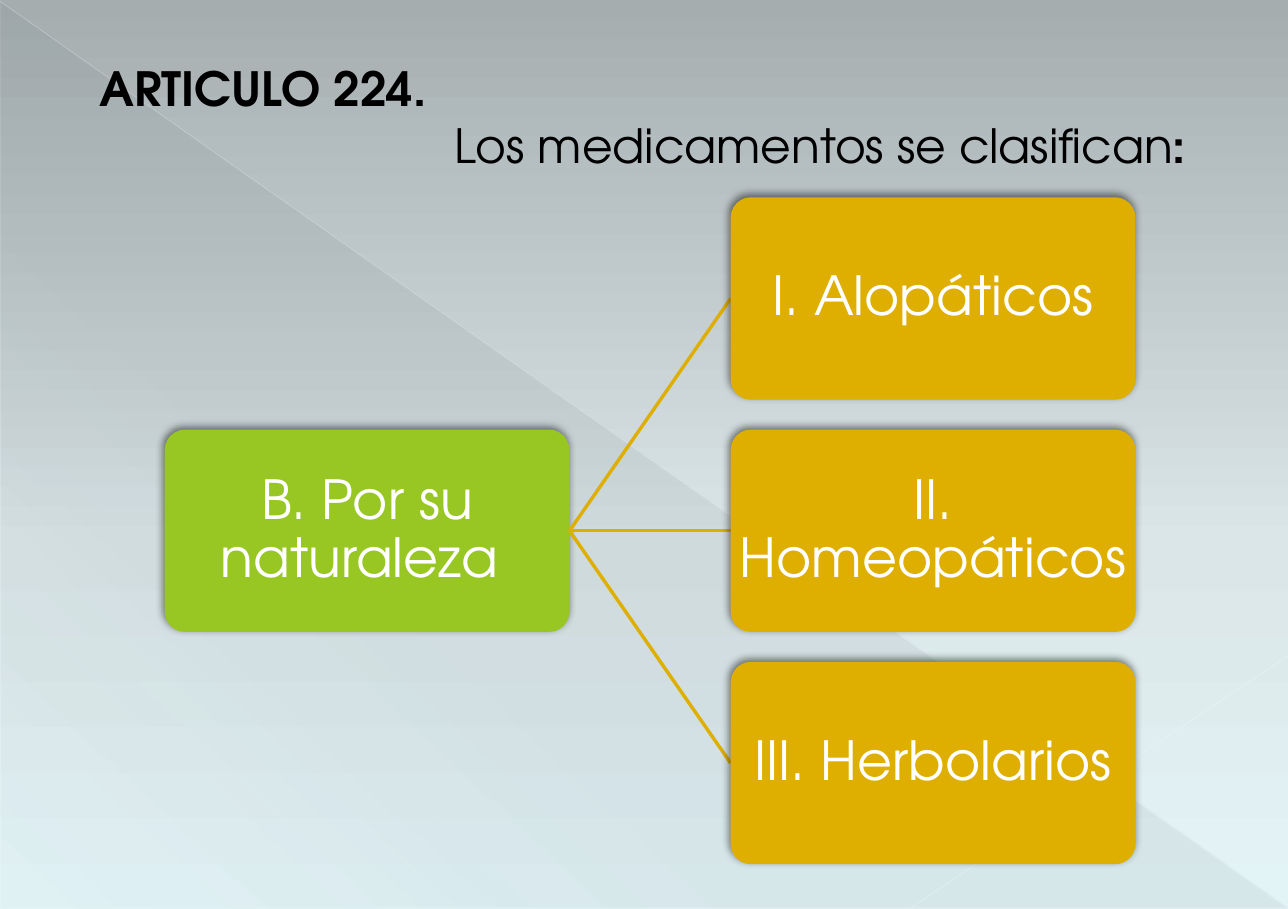
from typing import NamedTuple

from lxml.etree import SubElement
from pptx import Presentation
from pptx.dml.color import RGBColor
from pptx.enum.shapes import MSO_CONNECTOR as Link, MSO_SHAPE as Form
from pptx.enum.text import MSO_ANCHOR as Anchor, MSO_AUTO_SIZE as Fit, PP_ALIGN as Align
from pptx.oxml.ns import qn
from pptx.util import Pt

FONT = "TeX Gyre Adventor"
BLACK = RGBColor(0x00, 0x00, 0x00)
WHITE = RGBColor(0xFF, 0xFF, 0xFF)
GREEN = RGBColor(0x98, 0xC7, 0x23)
GOLD = RGBColor(0xDE, 0xAE, 0x00)
SLATE = RGBColor(0x5B, 0x69, 0x73)
PALE = RGBColor(0xF1, 0xF6, 0xF7)
SKY = (RGBColor(0xA5, 0xAD, 0xAF), RGBColor(0xDB, 0xE6, 0xE8), RGBColor(0xE3, 0xF4, 0xF7))

WIDE, HIGH = 765.36, 540
BOX_W, BOX_H = 240.5, 120.25
STEP = 138
ROOT_X, KID_X = 97.9, 434.2
TOP = 117.2


class Stop(NamedTuple):
    pos: int
    color: RGBColor
    alpha: int = 100


class Node(NamedTuple):
    text: str
    x: float
    row: int
    color: RGBColor


class Ray(NamedTuple):
    ends: tuple[float, float, float, float]
    width: float
    alpha: int


ROOT = Node("B. Por su naturaleza ", ROOT_X, 1, GREEN)
KIDS = [Node(text, KID_X, row, GOLD) for row, text in
        enumerate(("I. Alopáticos", "II. Homeopáticos", "III. Herbolarios"))]
RAYS = [Ray((0, 0.7, WIDE, 539.3), 0.39, 35),
        Ray((WIDE, 389.5, 541.4, 539.3), 0.47, 45)]


def put(item, form: dict) -> None:
    """Set each named attribute of item."""
    for name, value in form.items():
        setattr(item, name, value)


def tint(parent, color: RGBColor, alpha: int) -> None:
    """Add a colour with its opacity in percent."""
    node = SubElement(parent, qn("a:srgbClr"), val=str(color))
    SubElement(node, qn("a:alpha"), val=str(alpha * 1000))


def blend(fill, root, stops: list[Stop], angle: int) -> None:
    """Give the fill these stops, with the angle measured clockwise."""
    fill.gradient()
    grad = next(root.iter(qn("a:gradFill")))
    for part in list(grad):
        grad.remove(part)
    items = SubElement(grad, qn("a:gsLst"))
    for stop in stops:
        tint(SubElement(items, qn("a:gs"), pos=str(stop.pos * 1000)), stop.color, stop.alpha)
    SubElement(grad, qn("a:lin"), ang=str(angle * 60000), scaled="0")


def add_line(shapes, ends: tuple, color: RGBColor, width: float):
    line = shapes.add_connector(Link.STRAIGHT, *map(Pt, ends))
    line.line.color.rgb = color
    line.line.width = Pt(width)
    SubElement(line.element.spPr, qn("a:effectLst"))
    return line


def add_ray(shapes, ray: Ray) -> None:
    line = add_line(shapes, ray.ends, PALE, ray.width)
    color = next(line.element.spPr.iter(qn("a:srgbClr")))
    SubElement(color, qn("a:alpha"), val=str(ray.alpha * 1000))


def add_text(para, text: str, size: int, color: RGBColor, bold: bool = False) -> None:
    run = para.add_run()
    run.text = text
    put(run.font, dict(name=FONT, size=Pt(size), bold=bold))
    run.font.color.rgb = color


def add_node(shapes, node: Node):
    box = shapes.add_shape(Form.ROUNDED_RECTANGLE, Pt(node.x), Pt(TOP + node.row * STEP),
                           Pt(BOX_W), Pt(BOX_H))
    box.adjustments[0] = 0.1
    box.fill.solid()
    box.fill.fore_color.rgb = node.color
    box.line.fill.background()
    box.shadow.inherit = False
    effects = box.element.spPr.find(qn("a:effectLst"))
    shade = SubElement(effects, qn("a:outerShdw"), blurRad=str(Pt(5)), dist=str(Pt(2)),
                       dir=str(245 * 60000), rotWithShape="0")
    tint(shade, BLACK, 50)
    frame = box.text_frame
    put(frame, dict(word_wrap=True, vertical_anchor=Anchor.MIDDLE, margin_left=Pt(1),
                    margin_right=Pt(1), margin_top=Pt(1), margin_bottom=Pt(1)))
    para = frame.paragraphs[0]
    put(para, dict(alignment=Align.CENTER, line_spacing=0.9))
    add_text(para, node.text, 32, WHITE)
    return box


def add_back(slide) -> None:
    blend(slide.background.fill, slide.element,
          [Stop(pos, color) for pos, color in zip((0, 60, 100), SKY)], 90)
    wedge = slide.shapes.add_shape(Form.RIGHT_TRIANGLE, Pt(0.7), Pt(1.4), Pt(764.6), Pt(538.6))
    blend(wedge.fill, wedge.element,
          [Stop(0, SLATE, 10), Stop(70, SLATE, 8), Stop(100, SLATE, 1)], 133)
    wedge.line.fill.background()
    wedge.shadow.inherit = False
    for ray in RAYS:
        add_ray(slide.shapes, ray)


def add_tree(shapes) -> None:
    root = add_node(shapes, ROOT)
    for kid in KIDS:
        link = add_line(shapes, (0, 0, 0, 0), GOLD, 2)
        box = add_node(shapes, kid)
        link.begin_connect(root, 3)
        link.end_connect(box, 1)


def set_title(shapes) -> None:
    title = shapes.title
    put(title, dict(left=Pt(51.8), top=Pt(31.7), width=Pt(660.2), height=Pt(74.9)))
    frame = title.text_frame
    put(frame, dict(word_wrap=True, vertical_anchor=Anchor.TOP, auto_size=Fit.SHAPE_TO_FIT_TEXT))
    first, second = frame.paragraphs[0], frame.add_paragraph()
    first.alignment, second.alignment = Align.JUSTIFY, Align.RIGHT
    add_text(first, "ARTICULO 224.", 28, BLACK, True)
    add_text(second, "Los medicamentos se clasifican", 28, BLACK)
    add_text(second, ":", 28, BLACK, True)
    title.element.getparent().append(title.element)


def main() -> None:
    deck = Presentation()
    put(deck, dict(slide_width=Pt(WIDE), slide_height=Pt(HIGH)))
    slide = deck.slides.add_slide(deck.slide_layouts[5])
    add_back(slide)
    add_tree(slide.shapes)
    set_title(slide.shapes)
    deck.save("out.pptx")


if __name__ == "__main__":
    main()
